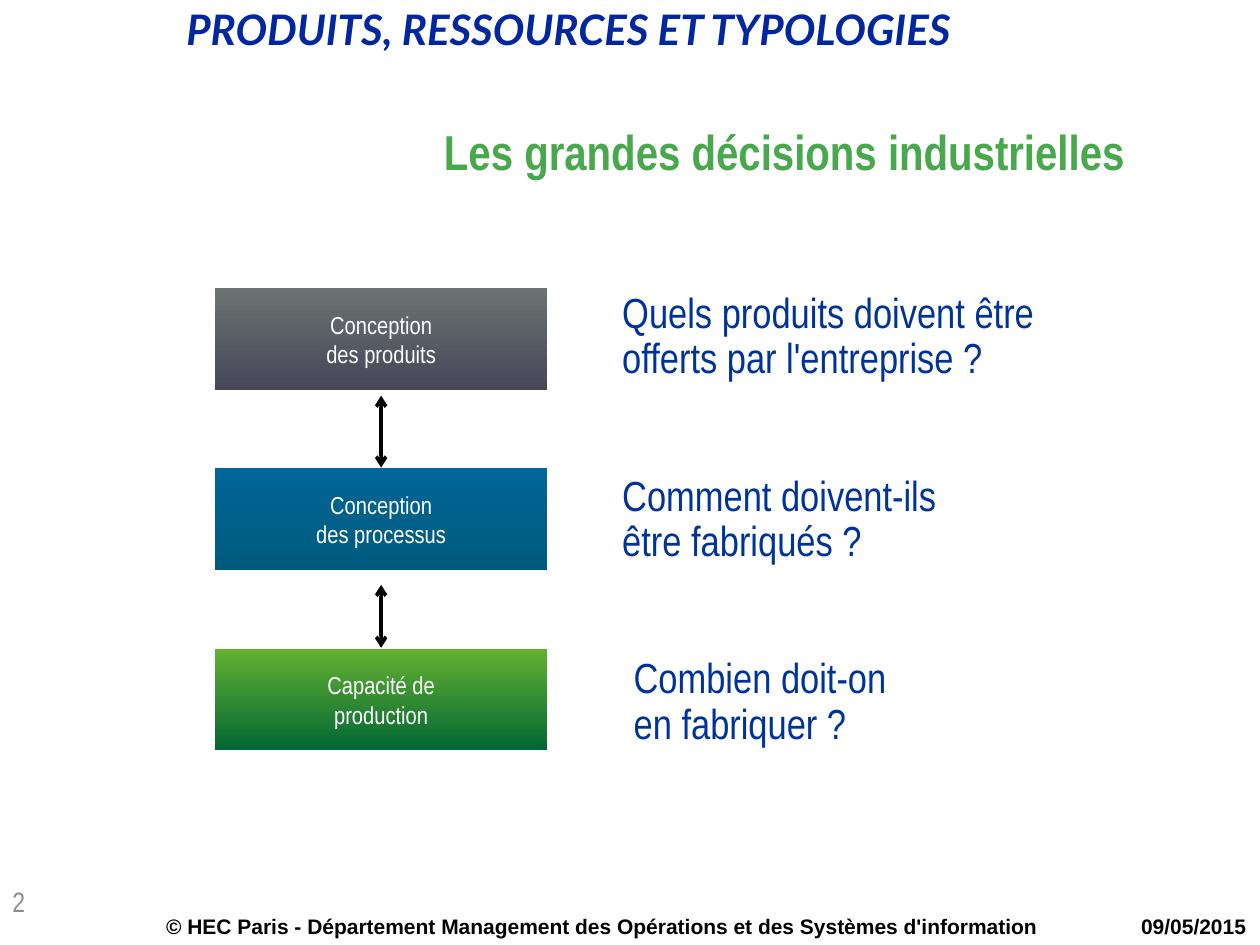
"""Build the slide on the main industrial decisions."""
import pptx
import pptx.util
import pptx.dml.color
import pptx.enum.shapes
import pptx.enum.text
import pptx.oxml
import pptx.oxml.ns
from pptx.util import Pt

ALIGN = pptx.enum.text.PP_ALIGN
ANCHOR = pptx.enum.text.MSO_ANCHOR
FIT = pptx.enum.text.MSO_AUTO_SIZE
RECTANGLE = pptx.enum.shapes.MSO_SHAPE.RECTANGLE
STRAIGHT = pptx.enum.shapes.MSO_CONNECTOR.STRAIGHT

HEADING = "PRODUITS, RESSOURCES ET TYPOLOGIES"
TITLE = "Les grandes décisions industrielles"
DECISIONS = [
    {"step": ["Conception", "des produits"], "gradient": ("6C7472", "464658"),
     "question": ["Quels produits doivent être", "offerts par l'entreprise ?"],
     "question_left": 348.5, "question_width": 252},
    {"step": ["Conception", "des processus"], "gradient": ("006699", "005A7C"),
     "question": ["Comment doivent-ils", "être fabriqués ?"],
     "question_left": 348.5, "question_width": 196},
    {"step": ["Capacité de", "production"], "gradient": ("66B132", "006633"),
     "question": ["Combien doit-on", "en fabriquer ?"],
     "question_left": 355, "question_width": 160},
]
PAGE_NUMBER = "2"
COPYRIGHT = "© HEC Paris - Département Management des Opérations et des Systèmes d'information"
DATE = "09/05/2015"

STEP_LEFT, STEP_TOP, STEP_WIDTH, STEP_HEIGHT, STEP_PITCH = 122.4, 164.2, 190.8, 59, 103
QUESTION_TOP, QUESTION_HEIGHT, QUESTION_PITCH = 163.4, 59.8, 104.4
ARROW_GAPS = [2.9, 8]


def rgb(value):
    """Return the colour for a hex string."""
    return pptx.dml.color.RGBColor.from_string(value)


def write(shape, lines, *, size, color, font="Arial Narrow", bold=False, italic=False,
          align=ALIGN.LEFT, anchor=ANCHOR.TOP, spacing=1.0, wrap=True, grow=False, margins=None):
    """Write one paragraph per line into a shape."""
    frame = shape.text_frame
    frame.word_wrap = wrap
    frame.auto_size = FIT.SHAPE_TO_FIT_TEXT if grow else FIT.NONE
    frame.vertical_anchor = anchor
    if margins is not None:
        frame.margin_left = frame.margin_right = Pt(margins)
        frame.margin_top = frame.margin_bottom = Pt(margins)
    for index, line in enumerate(lines):
        paragraph = frame.add_paragraph() if index else frame.paragraphs[0]
        paragraph.alignment = align
        paragraph.line_spacing = spacing
        run = paragraph.add_run()
        run.text = line
        run.font.name = font
        run.font.size = Pt(size)
        run.font.bold = bold
        run.font.italic = italic
        run.font.color.rgb = rgb(color)


def text_box(slide, left, top, width, height, lines, **style):
    """Add a text box with formatted lines."""
    box = slide.shapes.add_textbox(Pt(left), Pt(top), Pt(width), Pt(height))
    write(box, lines, **style)


def rectangle(slide, left, top, width, height):
    """Add a rectangle without shadow."""
    shape = slide.shapes.add_shape(RECTANGLE, Pt(left), Pt(top), Pt(width), Pt(height))
    shape.shadow.inherit = False
    return shape


def step_box(slide, top, decision):
    """Add one gradient box of the decision chain."""
    step = rectangle(slide, STEP_LEFT, top, STEP_WIDTH, STEP_HEIGHT)
    step.fill.gradient()
    step.fill.gradient_angle = 270
    for position, (stop, color) in enumerate(zip(step.fill.gradient_stops, decision["gradient"])):
        stop.position = position
        stop.color.rgb = rgb(color)
    step.line.color.rgb = rgb("FFFFFF")
    step.line.width = Pt(1)
    write(step, decision["step"], size=14, color="FFFFFF", align=ALIGN.CENTER,
          anchor=ANCHOR.MIDDLE, margins=0)
    return step


def double_arrow(slide, start, step):
    """Add a two-headed arrow that ends on top of a step."""
    middle = step.left + step.width // 2
    arrow = slide.shapes.add_connector(STRAIGHT, middle, Pt(start), middle, step.top)
    arrow.end_connect(step, 0)
    arrow.line.color.rgb = rgb("000000")
    arrow.line.width = Pt(2)
    line = arrow.line._get_or_add_ln()
    for end in ("a:headEnd", "a:tailEnd"):
        pptx.oxml.ns.qn(end)
        line.append(pptx.oxml.parse_xml(f'<{end} {pptx.oxml.ns.nsdecls("a")} type="arrow"/>'))
    properties = arrow._element.spPr
    properties.append(pptx.oxml.parse_xml(f'<a:effectLst {pptx.oxml.ns.nsdecls("a")}/>'))


def footer(slide, left, width, text, wrap):
    """Add a white footer block with bold text."""
    block = rectangle(slide, left, 518.4, width, 21.6)
    block.fill.solid()
    block.fill.fore_color.rgb = rgb("FFFFFF")
    block.line.fill.background()
    write(block, [text], size=12, color="000000", font="Arial", bold=True, wrap=wrap, grow=True)


def main():
    """Build and save the slide."""
    deck = pptx.Presentation()
    deck.slide_width, deck.slide_height = Pt(720), Pt(540)
    slide = deck.slides.add_slide(deck.slide_layouts[6])
    text_box(slide, 99.4, 2, 525.6, 33, [HEADING], size=24, color="00279F", font="Lato",
             bold=True, italic=True, spacing=0.9, wrap=False, grow=True)
    text_box(slide, 65.5, 54.7, 584, 67.7, [TITLE], size=28, color="48A94C", bold=True,
             align=ALIGN.RIGHT, anchor=ANCHOR.MIDDLE, spacing=0.9)

    for row, decision in enumerate(DECISIONS):
        top = STEP_TOP + row * STEP_PITCH
        step = step_box(slide, top, decision)
        if row:
            previous_bottom = top - STEP_PITCH + STEP_HEIGHT
            double_arrow(slide, previous_bottom + ARROW_GAPS[row - 1], step)
        text_box(slide, decision["question_left"], QUESTION_TOP + row * QUESTION_PITCH,
                 decision["question_width"], QUESTION_HEIGHT, decision["question"],
                 size=24, color="003399", spacing=0.9, wrap=False, grow=True)

    text_box(slide, 0, 501.8, 48, 28.8, [PAGE_NUMBER], size=16, color="8C8C8C")
    footer(slide, 87.8, 527, COPYRIGHT, True)
    footer(slide, 645, 75, DATE, False)
    deck.save("out.pptx")


if __name__ == "__main__":
    main()
